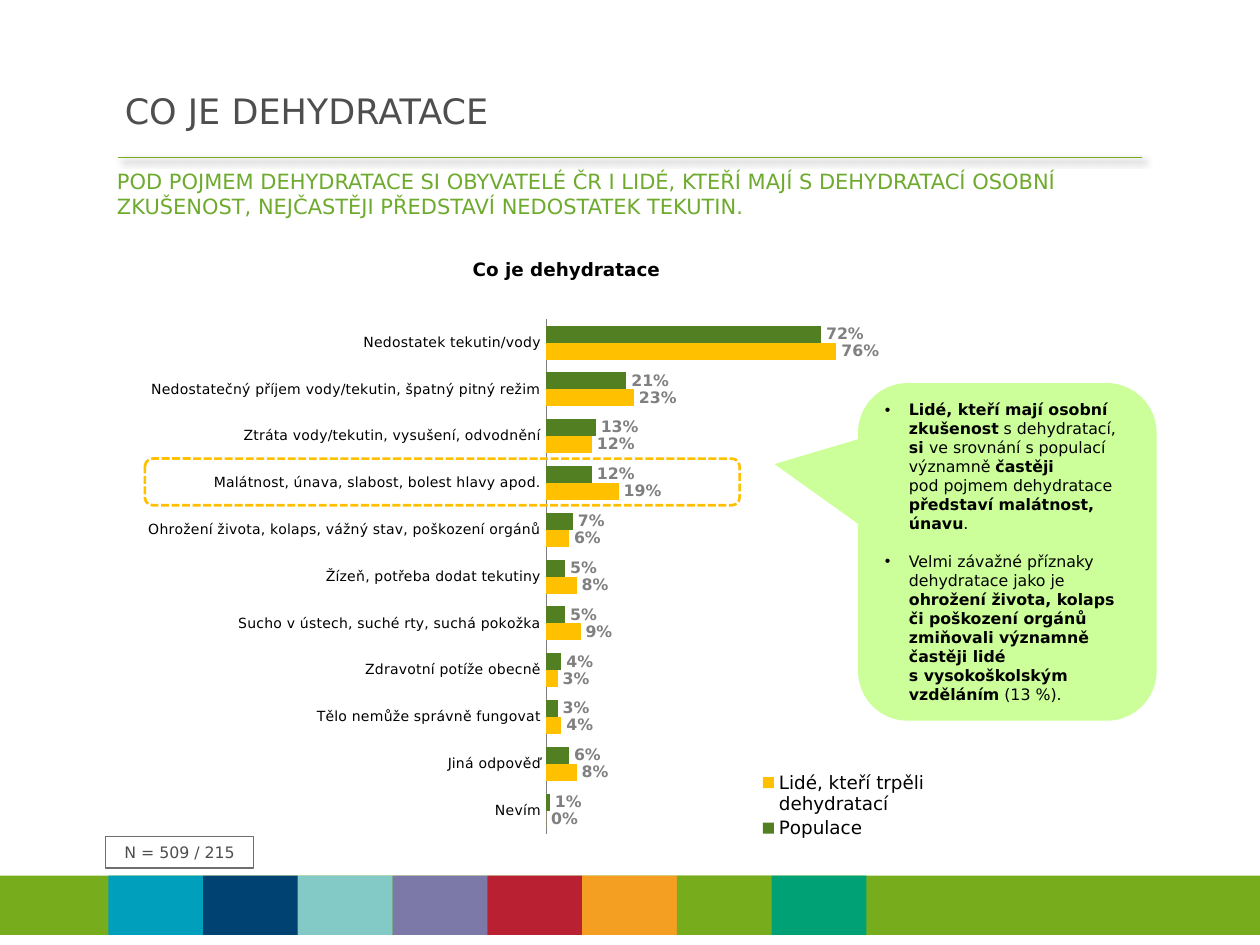
from lxml import etree
from pptx import Presentation
from pptx.chart.data import CategoryChartData
from pptx.dml.color import RGBColor
from pptx.enum.chart import XL_CHART_TYPE, XL_LABEL_POSITION, XL_LEGEND_POSITION, XL_TICK_MARK
from pptx.enum.dml import MSO_LINE
from pptx.enum.shapes import MSO_CONNECTOR, MSO_SHAPE
from pptx.enum.text import MSO_ANCHOR, PP_ALIGN
from pptx.oxml import parse_xml
from pptx.oxml.ns import nsdecls, qn
from pptx.util import Inches, Pt

BAR = XL_CHART_TYPE.BAR_CLUSTERED
END = XL_LABEL_POSITION.OUTSIDE_END
RIGHT = XL_LEGEND_POSITION.RIGHT
NO_TICK = XL_TICK_MARK.NONE
DASH = MSO_LINE.SQUARE_DOT
LINE = MSO_CONNECTOR.STRAIGHT
RECT = MSO_SHAPE.RECTANGLE
ROUND = MSO_SHAPE.ROUNDED_RECTANGLE
BUBBLE = MSO_SHAPE.ROUNDED_RECTANGULAR_CALLOUT
MIDDLE = MSO_ANCHOR.MIDDLE
LEFT, CENTER = PP_ALIGN.LEFT, PP_ALIGN.CENTER

FONT = "DejaVu Sans"
HUES = {
    "black": "000000", "text": "4E4E4E", "label": "808080", "frame": "6E6E6E",
    "rule": "77AD1C", "lead": "6EAA2E", "people": "527F22", "gold": "FFC000",
    "lime": "CCFF99",
}
TILES = ["009FBB", "004272", "83C9C6", "7C78A8", "B92032", "F49F22", "77AD1C", "00A275"]

ROWS = [
    ("Nedostatek tekutin/vody", 0.72, 0.76),
    ("Nedostatečný příjem vody/tekutin, špatný pitný režim", 0.21, 0.23),
    ("Ztráta vody/tekutin, vysušení, odvodnění", 0.13, 0.12),
    ("Malátnost, únava, slabost, bolest hlavy apod.", 0.12, 0.19),
    ("Ohrožení života, kolaps, vážný stav, poškození orgánů", 0.07, 0.06),
    ("Žízeň, potřeba dodat tekutiny", 0.05, 0.08),
    ("Sucho v ústech, suché rty, suchá pokožka", 0.05, 0.09),
    ("Zdravotní potíže obecně", 0.04, 0.03),
    ("Tělo nemůže správně fungovat", 0.03, 0.04),
    ("Jiná odpověď", 0.06, 0.08),
    ("Nevím", 0.01, 0),
]
NOTES = [
    [("Lidé, kteří mají osobní zkušenost", True), (" s dehydratací, ", False),
     ("si ", True), ("ve srovnání s populací významně ", False), ("častěji", True),
     None, ("pod pojmem dehydratace ", False), ("představí malátnost, únavu", True),
     (".", False)],
    [("Velmi závažné příznaky dehydratace jako je ", False),
     ("ohrožení života, kolaps či poškození orgánů zmiňovali významně častěji lidé", True),
     None, ("s vysokoškolským vzděláním", True), (" (13 %).", False)],
]


def color(hue):
    return RGBColor.from_string(hue)


def style(font, size, hue, bold=False):
    font.name, font.size, font.bold = FONT, Pt(size), bold
    font.color.rgb = color(hue)


def add_run(para, text, size, hue, bold=False):
    run = para.add_run()
    run.text = text
    style(run.font, size, hue, bold)


def add_form(slide, kind, box, fill=None, line=None, width=0.75):
    form = slide.shapes.add_shape(kind, *map(Inches, box))
    form.shadow.inherit = False
    if fill:
        form.fill.solid()
        form.fill.fore_color.rgb = color(fill)
    else:
        form.fill.background()
    if line:
        form.line.color.rgb = color(line)
        form.line.width = Pt(width)
    else:
        form.line.fill.background()
    return form


def add_head(slide, box):
    title = slide.shapes.title
    title.left, title.top, title.width, title.height = map(Inches, box)
    frame = title.text_frame
    frame.vertical_anchor = MIDDLE
    para = frame.paragraphs[0]
    para.alignment = LEFT
    add_run(para, "CO JE DEHYDRATACE", 20, HUES["text"])


def add_rule(slide, left, top, width):
    rule = slide.shapes.add_connector(
        LINE, Inches(left), Inches(top), Inches(left + width), Inches(top))
    rule.line.color.rgb = color(HUES["rule"])
    rule.line.width = Pt(0.75)
    rule.line._get_or_add_ln().addnext(parse_xml(
        f'<a:effectLst {nsdecls("a")}><a:outerShdw blurRad="50800" dist="38100" '
        'dir="2700000" algn="tl" rotWithShape="0"><a:srgbClr val="000000">'
        '<a:alpha val="40000"/></a:srgbClr></a:outerShdw></a:effectLst>'))


def add_lead(slide, box):
    frame = slide.shapes.add_textbox(*map(Inches, box)).text_frame
    frame.word_wrap = True
    add_run(frame.paragraphs[0],
            "POD POJMEM DEHYDRATACE SI OBYVATELÉ ČR I LIDÉ, KTEŘÍ MAJÍ S DEHYDRATACÍ "
            "OSOBNÍ ZKUŠENOST, NEJČASTĚJI PŘEDSTAVÍ NEDOSTATEK TEKUTIN.",
            12, HUES["lead"])


def add_band(slide, box):
    left, top, width, height = box
    add_form(slide, RECT, box, HUES["rule"])
    step = 0.752
    for i, hue in enumerate(TILES):
        add_form(slide, RECT, (left + 0.86 + i * step, top, step, height), hue)


def set_layout(part, left, top, width=None, height=None, inner=False):
    for old in part.findall(qn("c:layout")):
        part.remove(old)
    layout = parse_xml(f'<c:layout {nsdecls("c")}><c:manualLayout/></c:layout>')
    marks = [("layoutTarget", "inner")] if inner else []
    marks += [("xMode", "edge"), ("yMode", "edge"), ("x", left), ("y", top)]
    if width:
        marks += [("w", width), ("h", height)]
    for tag, val in marks:
        etree.SubElement(layout[0], qn("c:" + tag)).set("val", str(val))
    before = part.find(qn("c:tx"))
    if before is None:
        before = part.find(qn("c:legendPos"))
    if before is None:
        part.insert(0, layout)
    else:
        before.addnext(layout)


def add_bars(slide, box):
    names, people, dry = zip(*ROWS)
    data = CategoryChartData(number_format="0%")
    data.categories = names
    data.add_series("Populace", people)
    data.add_series("Lidé, kteří trpěli dehydratací", dry)
    chart = slide.shapes.add_chart(BAR, *map(Inches, box), data).chart
    style(chart.font, 18, HUES["black"])

    chart.has_title = True
    add_run(chart.chart_title.text_frame.paragraphs[0],
            "Co je dehydratace", 10.5, HUES["black"], True)
    set_layout(chart.chart_title._element, 0.54, 0.01)

    plot = chart.plots[0]
    plot.gap_width, plot.overlap = 75, 0
    plot.vary_by_categories = False
    set_layout(chart._chartSpace.chart.plotArea, 0.612, 0.116, 0.357, 0.841, True)
    for serie, hue in zip(plot.series, (HUES["people"], HUES["gold"])):
        serie.format.fill.solid()
        serie.format.fill.fore_color.rgb = color(hue)
        labels = serie.data_labels
        labels.show_value = True
        labels.number_format, labels.number_format_is_linked = "0%", False
        labels.position = END
        style(labels.font, 9, HUES["label"], True)

    axis = chart.category_axis
    axis.reverse_order = True
    axis.major_tick_mark = axis.minor_tick_mark = NO_TICK
    axis.format.line.color.rgb = color(HUES["label"])
    style(axis.tick_labels.font, 8, HUES["black"])
    scale = chart.value_axis
    scale.minimum_scale, scale.maximum_scale = 0, 1
    scale.has_major_gridlines = scale.visible = False

    chart.has_legend = True
    chart.legend.position = RIGHT
    chart.legend.include_in_layout = False
    style(chart.legend.font, 10.5, HUES["black"])
    set_layout(chart.legend._element, 0.80, 0.85, 0.18, 0.12)


def add_notes(slide, box):
    bubble = add_form(slide, BUBBLE, box, HUES["lime"])
    for i, val in enumerate((-0.78, -0.26, 0.167)):
        bubble.adjustments[i] = val
    frame = bubble.text_frame
    frame.word_wrap = True
    frame.vertical_anchor = MIDDLE
    for i, note in enumerate(NOTES):
        para = frame.add_paragraph() if i else frame.paragraphs[0]
        para.alignment = LEFT
        if i:
            para.space_before = Pt(11)
        props = para._p.get_or_add_pPr()
        props.set("marL", str(Inches(0.19)))
        props.set("indent", str(Inches(-0.19)))
        etree.SubElement(props, qn("a:buFont")).set("typeface", "Arial")
        etree.SubElement(props, qn("a:buChar")).set("char", "•")
        for part in note:
            if part is None:
                para.add_line_break()
            else:
                add_run(para, part[0], 9, HUES["black"], part[1])


def add_base(slide, box):
    frame = add_form(slide, RECT, box, line=HUES["frame"]).text_frame
    para = frame.paragraphs[0]
    para.alignment = CENTER
    add_run(para, "N = 509 / 215", 9, HUES["text"])


def main():
    deck = Presentation()
    deck.slide_width, deck.slide_height = Inches(10), Inches(7.5)
    slide = deck.slides.add_slide(deck.slide_layouts[5])
    add_rule(slide, 0.94, 1.25, 8.12)
    add_band(slide, (0, 6.95, 10, 0.47))
    add_head(slide, (0.89, 0.62, 8.87, 0.51))
    add_lead(slide, (0.83, 1.29, 8.35, 0.55))
    add_bars(slide, (-0.86, 1.97, 8.49, 4.86))
    add_notes(slide, (6.81, 3.04, 2.37, 2.68))
    add_base(slide, (0.84, 6.64, 1.17, 0.25))
    mark = add_form(slide, ROUND, (1.15, 3.64, 4.72, 0.37), line=HUES["gold"], width=1.5)
    mark.line.dash_style = DASH
    deck.save("out.pptx")


if __name__ == "__main__":
    main()
